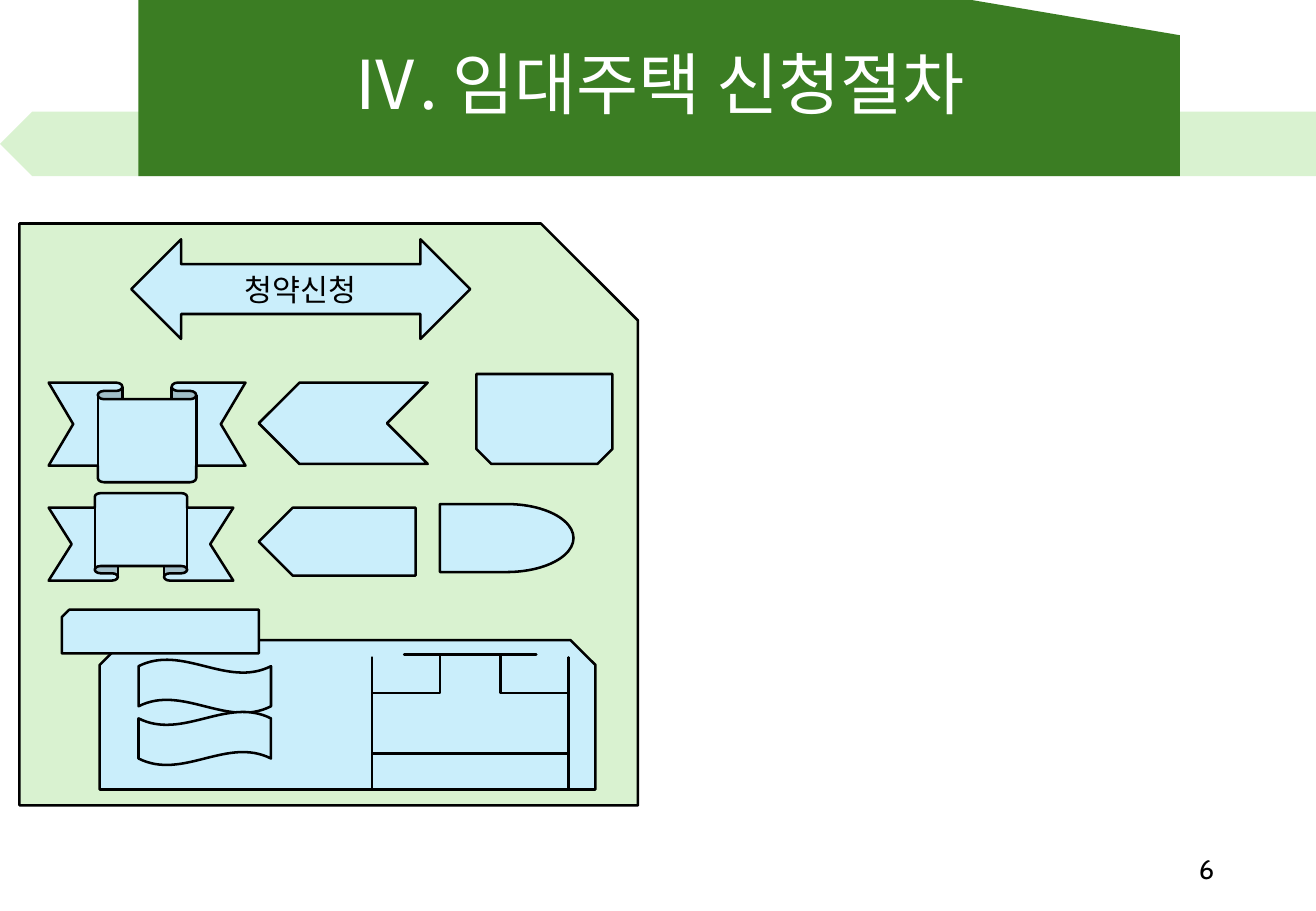
from lxml import etree
from pptx import Presentation
from pptx import util as u
from pptx.dml.color import RGBColor
from pptx.enum import shapes, text
from pptx.oxml import ns

BLACK = RGBColor(0x00, 0x00, 0x00)
WHITE = RGBColor(0xFF, 0xFF, 0xFF)
DARK_GREEN = RGBColor(0x3B, 0x7D, 0x23)
PALE_GREEN = RGBColor(0xD9, 0xF2, 0xD0)
PALE_BLUE = RGBColor(0xCA, 0xEE, 0xFB)

KOREAN_FONT = "Noto Sans CJK KR"
NUMBER_FONT = "Cabin"
EMU_PER_PX = 9144  # 100 px to the inch
KIND = shapes.MSO_SHAPE


def write_text(shape, content, size, font=KOREAN_FONT, color=BLACK,
               align=text.PP_ALIGN.CENTER, line_spacing=None):
    frame = shape.text_frame
    frame.word_wrap = True
    frame.auto_size = text.MSO_AUTO_SIZE.NONE
    frame.vertical_anchor = text.MSO_ANCHOR.MIDDLE
    paragraph = frame.paragraphs[0]
    paragraph.alignment = align
    paragraph.space_before = u.Pt(0)
    paragraph.line_spacing = line_spacing
    run = paragraph.add_run()
    run.text = content
    run.font.size = u.Pt(size)
    run.font.color.rgb = color
    run.font.name = font
    east_asian = etree.SubElement(run.font._element, ns.qn("a:ea"))
    east_asian.set("typeface", font)


class SlideBuilder:
    def __init__(self, width, height):
        self.presentation = Presentation()
        self.presentation.slide_width, self.presentation.slide_height = self.emu(width, height)
        self.slide = self.presentation.slides.add_slide(self.presentation.slide_layouts[5])

    def emu(self, *lengths):
        return [u.Emu(length * EMU_PER_PX) for length in lengths]

    def shape(self, kind, box, fill=PALE_BLUE, outlined=True, flip=None, adjustments=()):
        shape = self.slide.shapes.add_shape(kind, *self.emu(*box))
        shape.shadow.inherit = False
        shape.fill.solid()
        shape.fill.fore_color.rgb = fill
        if outlined:
            shape.line.color.rgb = BLACK
            shape.line.width = u.Pt(1.5)
        else:
            shape.line.fill.background()
        if flip:
            shape._element.spPr.get_or_add_xfrm().set(flip, "1")
        for index, value in enumerate(adjustments):
            shape.adjustments[index] = value
        return shape

    def title(self, content, box, **style):
        title = self.slide.shapes.title
        title.left, title.top, title.width, title.height = self.emu(*box)
        # Bring the title in front of the banner
        self.slide.shapes._spTree.append(title._element)
        write_text(title, content, **style)

    def text_box(self, content, box, **style):
        write_text(self.slide.shapes.add_textbox(*self.emu(*box)), content, **style)


def main():
    builder = SlideBuilder(1083, 750)

    # Header banner and title
    builder.shape(KIND.PENTAGON, (0, 92, 1083, 53), PALE_GREEN, outlined=False, flip="flipH")
    builder.shape(KIND.FLOWCHART_CARD, (114, 0, 857, 145), DARK_GREEN, outlined=False,
                  flip="flipH")
    builder.title("Ⅳ. 임대주택 신청절차", (0, 0, 1083, 145), size=40, color=WHITE,
                  line_spacing=0.9)

    # Panel with its heading arrow
    builder.shape(KIND.SNIP_1_RECTANGLE, (16, 184, 509, 479), PALE_GREEN)
    heading = builder.shape(KIND.LEFT_RIGHT_ARROW, (108, 197, 279, 82))
    write_text(heading, "청약신청", size=18)

    # Blue shapes inside the panel, from back to front
    for kind, box, flip in (
        (KIND.DOWN_RIBBON, (40, 315, 162, 82), None),
        (KIND.CHEVRON, (213, 315, 139, 67), "flipH"),
        (KIND.SNIP_2_SAME_RECTANGLE, (392, 308, 112, 74), "flipV"),
        (KIND.UP_RIBBON, (40, 406, 152, 72), None),
        (KIND.PENTAGON, (213, 418, 129, 56), "flipH"),
        (KIND.SNIP_2_SAME_RECTANGLE, (82, 527, 408, 123), None),
        (KIND.SNIP_1_RECTANGLE, (51, 502, 162, 36), "flipH"),
        (KIND.WAVE, (114, 543, 109, 44), None),
        (KIND.WAVE, (114, 586, 109, 44), "flipH"),
        (KIND.FLOWCHART_DELAY, (362, 415, 110, 56), None),
    ):
        builder.shape(kind, box, flip=flip)
    builder.shape(KIND.LEFT_RIGHT_UP_ARROW, (306, 539, 162, 111),
                  adjustments=(0.45, 0.49, 0))

    # Slide number
    builder.text_box("6", (765, 695, 244, 40), size=16, font=NUMBER_FONT,
                     align=text.PP_ALIGN.RIGHT)

    builder.presentation.save("out.pptx")


if __name__ == "__main__":
    main()
